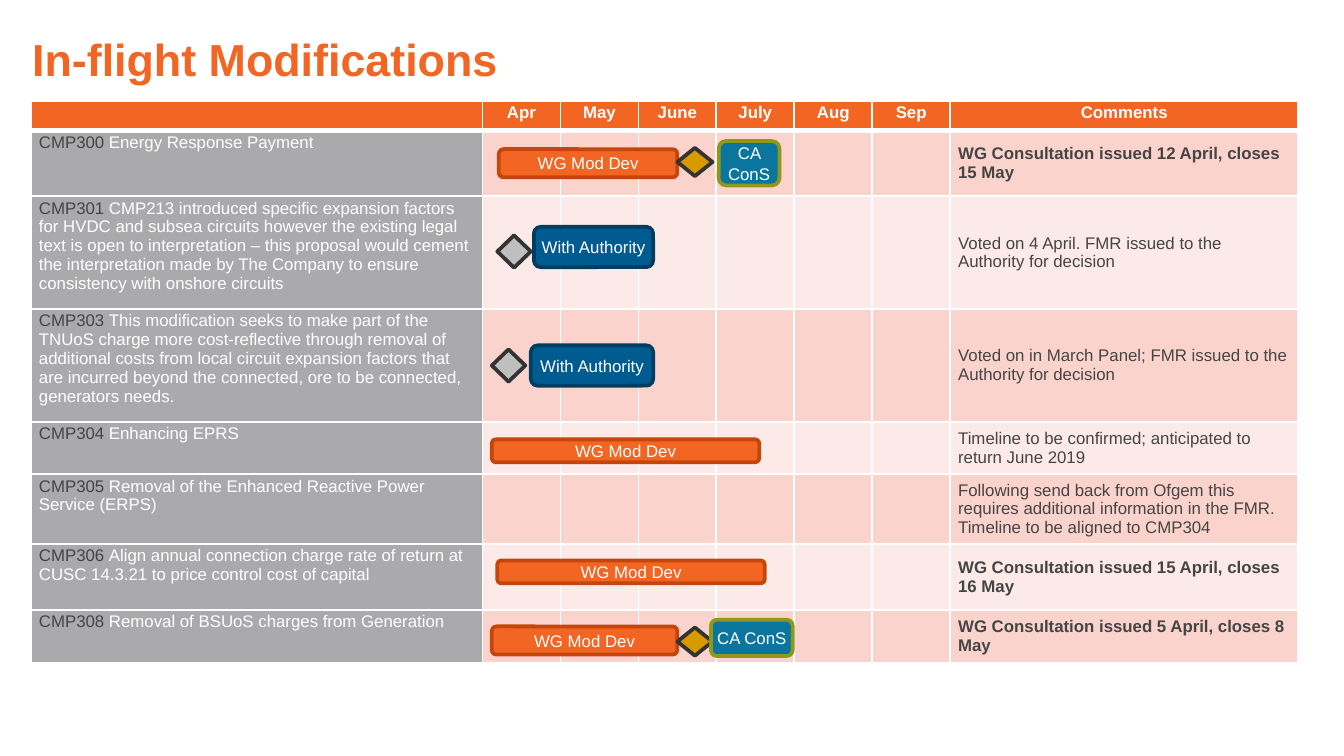
import itertools

import lxml.etree
import pptx
import pptx.dml.color
import pptx.enum.shapes
import pptx.enum.text
import pptx.oxml.ns
import pptx.util

Inches = pptx.util.Inches
Pt = pptx.util.Pt
ALIGN = pptx.enum.text.PP_ALIGN
ANCHOR = pptx.enum.text.MSO_ANCHOR
SHAPE = pptx.enum.shapes.MSO_SHAPE

COLORS = {
    "orange": "F26522", "dark orange": "C3470C", "grey": "AAAAAC",
    "text": "454545", "white": "FFFFFF", "pink": "FAD3CD", "pale pink": "FCEAE8",
    "teal": "0A769E", "olive": "90981A", "blue": "005B91", "navy": "003D60",
    "gold": "D99A00", "silver": "BFBFBF", "charcoal": "333333",
}

TITLE = "In-flight Modifications"
MONTHS = ["Apr", "May", "June", "July", "Aug", "Sep"]

# Code, description, comment, bold comment, row height
MODIFICATIONS = [
    ("CMP300", "Energy Response Payment",
     "WG Consultation issued 12 April, closes 15 May", True, 0.49),
    ("CMP301", "CMP213 introduced specific expansion factors for HVDC and subsea "
     "circuits however the existing legal text is open to interpretation – this "
     "proposal would cement the interpretation made by The Company to ensure "
     "consistency with onshore circuits",
     "Voted on 4 April. FMR issued to the Authority for decision", False, 0.84),
    ("CMP303", "This modification seeks to make part of the TNUoS charge more "
     "cost-reflective through removal of additional costs from local circuit "
     "expansion factors that are incurred beyond the connected, ore to be "
     "connected, generators needs.",
     "Voted on in March Panel; FMR issued to the Authority for decision", False, 0.84),
    ("CMP304", "Enhancing EPRS",
     "Timeline to be confirmed; anticipated to return June 2019", False, 0.39),
    ("CMP305", "Removal of the Enhanced Reactive Power Service (ERPS)",
     "Following send back from Ofgem this requires additional information in the "
     "FMR. Timeline to be aligned to CMP304", False, 0.52),
    ("CMP306", "Align annual connection charge rate of return at CUSC 14.3.21 to "
     "price control cost of capital",
     "WG Consultation issued 15 April, closes 16 May", True, 0.49),
    ("CMP308", "Removal of BSUoS charges from Generation",
     "WG Consultation issued 5 April, closes 8 May", True, 0.39),
]

# Preset, fill, line, label
STAGES = {
    "development": (SHAPE.ROUNDED_RECTANGLE, "orange", "dark orange", "WG Mod Dev"),
    "consultation": (SHAPE.ROUNDED_RECTANGLE, "teal", "olive", "CA ConS"),
    "authority": (SHAPE.ROUNDED_RECTANGLE, "blue", "navy", "With Authority"),
    "report": (SHAPE.DIAMOND, "gold", "charcoal", ""),
    "vote": (SHAPE.DIAMOND, "silver", "charcoal", ""),
}

# Code, stage, start and length in months, height, centre as a share of the row
TIMELINE = [
    ("CMP300", "development", 0.21, 2.29, 0.21, 0.5),
    ("CMP300", "consultation", 3.03, 0.78, 0.33, 0.5),
    ("CMP300", "report", 2.5, 0.45, 0.21, 0.48),
    ("CMP301", "vote", 0.19, 0.43, 0.24, 0.49),
    ("CMP301", "authority", 0.66, 1.53, 0.3, 0.45),
    ("CMP303", "vote", 0.12, 0.43, 0.24, 0.5),
    ("CMP303", "authority", 0.62, 1.57, 0.3, 0.5),
    ("CMP304", "development", 0.12, 3.43, 0.17, 0.55),
    ("CMP306", "development", 0.19, 3.43, 0.17, 0.42),
    ("CMP308", "development", 0.12, 2.38, 0.21, 0.58),
    ("CMP308", "report", 2.5, 0.45, 0.21, 0.6),
    ("CMP308", "consultation", 2.93, 1.05, 0.27, 0.53),
]

SLIDE_WIDTH = 10
SLIDE_HEIGHT = SLIDE_WIDTH * 9 / 16
TABLE_LEFT, TABLE_TOP = 0.23, 0.75
NAME_WIDTH, MONTH_WIDTH, COMMENT_WIDTH = 3.36, 0.58, 2.59
COLUMNS = [NAME_WIDTH] + [MONTH_WIDTH] * len(MONTHS) + [COMMENT_WIDTH]
ROWS = [0.22] + [modification[-1] for modification in MODIFICATIONS]
ROW_TOPS = list(itertools.accumulate(ROWS, initial=TABLE_TOP))


def rgb(name):
    return pptx.dml.color.RGBColor.from_string(COLORS[name])


def write(frame, *runs, size=9, bold=False, align=ALIGN.LEFT, anchor=ANCHOR.TOP,
          margins=(0, 0), spacing=None):
    """Fill a text frame or cell with one paragraph of (text, colour) runs."""
    frame.margin_left = frame.margin_right = Inches(margins[0])
    frame.margin_top = frame.margin_bottom = Inches(margins[1])
    frame.vertical_anchor = anchor
    text_frame = getattr(frame, "text_frame", frame)
    text_frame.word_wrap = True
    paragraph = text_frame.paragraphs[0]
    paragraph.alignment = align
    if spacing:
        paragraph.line_spacing = spacing
    for text, color in runs:
        run = paragraph.add_run()
        run.text = text
        run.font.name, run.font.size, run.font.bold = "Arial", Pt(size), bold
        run.font.color.rgb = rgb(color)
    if not runs:
        end = lxml.etree.SubElement(paragraph._p, pptx.oxml.ns.qn("a:endParaRPr"))
        end.set("sz", str(size * 100))


def set_borders(cell, **widths):
    properties = cell._tc.get_or_add_tcPr()
    for side, width in widths.items():
        line = lxml.etree.SubElement(properties, pptx.oxml.ns.qn(f"a:ln{side}"), w=str(Pt(width)))
        fill = lxml.etree.SubElement(line, pptx.oxml.ns.qn("a:solidFill"))
        lxml.etree.SubElement(fill, pptx.oxml.ns.qn("a:srgbClr"), val=COLORS["white"])


def fill_cell(cell, row, fill, *runs, **text_format):
    set_borders(cell, L=1, R=1, T=3 if row == 1 else 1, B=3 if row == 0 else 1)
    cell.fill.solid()
    cell.fill.fore_color.rgb = rgb(fill)
    write(cell, *runs, margins=(0.06, 0.02), **text_format)


def add_modifications_table(slide):
    table = slide.shapes.add_table(
        len(ROWS), len(COLUMNS), Inches(TABLE_LEFT), Inches(TABLE_TOP),
        Inches(sum(COLUMNS)), Inches(sum(ROWS))).table
    table.first_row = table.horz_banding = False
    for column, width in zip(table.columns, COLUMNS):
        column.width = Inches(width)
    for row, height in zip(table.rows, ROWS):
        row.height = Inches(height)

    for column, heading in enumerate(["", *MONTHS, "Comments"]):
        runs = [(heading, "white")] if heading else []
        fill_cell(table.cell(0, column), 0, "orange", *runs, bold=True, align=ALIGN.CENTER)
    for row, (code, description, comment, bold, _) in enumerate(MODIFICATIONS, 1):
        band = "pink" if row % 2 else "pale pink"
        fill_cell(table.cell(row, 0), row, "grey", (code + " ", "text"), (description, "white"))
        for column in range(1, len(MONTHS) + 1):
            fill_cell(table.cell(row, column), row, band)
        fill_cell(table.cell(row, len(COLUMNS) - 1), row, band, (comment, "text"),
                  bold=bold, anchor=ANCHOR.MIDDLE)


def add_stage(slide, code, stage, start, length, height, centre):
    preset, fill, line, label = STAGES[stage]
    row = 1 + [modification[0] for modification in MODIFICATIONS].index(code)
    left = TABLE_LEFT + NAME_WIDTH + start * MONTH_WIDTH
    top = ROW_TOPS[row] + centre * ROWS[row] - height / 2
    shape = slide.shapes.add_shape(preset, Inches(left), Inches(top),
                                   Inches(length * MONTH_WIDTH), Inches(height))
    shape.shadow.inherit = False
    shape.fill.solid()
    shape.fill.fore_color.rgb = rgb(fill)
    shape.line.color.rgb = rgb(line)
    shape.line.width = Pt(2)
    if label:
        write(shape.text_frame, (label, "white"), align=ALIGN.CENTER, anchor=ANCHOR.MIDDLE)


def main():
    presentation = pptx.Presentation()
    presentation.slide_width = Inches(SLIDE_WIDTH)
    presentation.slide_height = Inches(SLIDE_HEIGHT)
    slide = presentation.slides.add_slide(presentation.slide_layouts[6])
    add_modifications_table(slide)
    title = slide.shapes.add_textbox(Inches(0.24), Inches(0.31), Inches(6.64), Inches(0.38))
    write(title.text_frame, (TITLE, "orange"), size=24, bold=True, spacing=0.8)
    for entry in TIMELINE:
        add_stage(slide, *entry)
    presentation.save("out.pptx")


if __name__ == "__main__":
    main()
